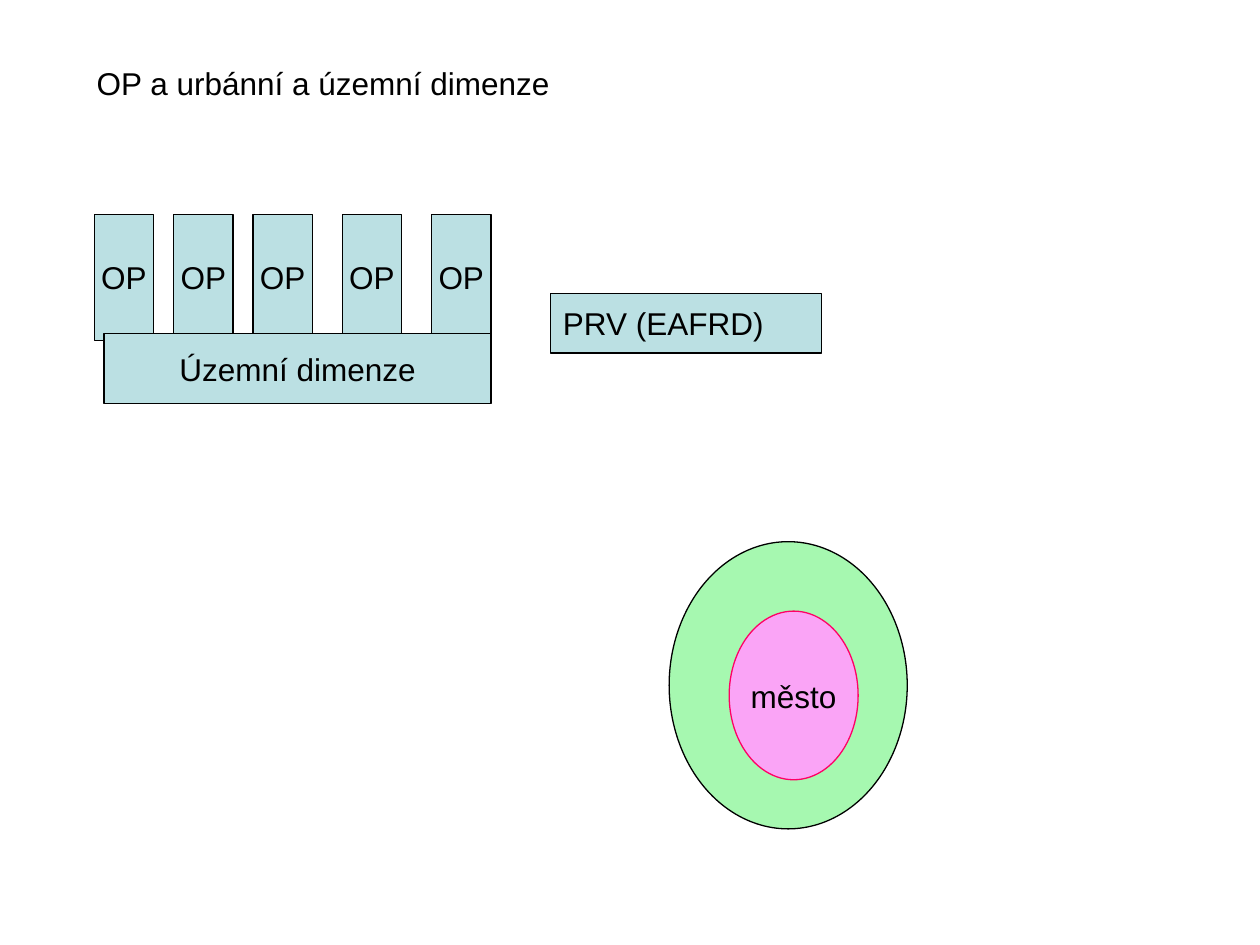
"""Builds a slide on the urban and territorial dimension of the programmes."""
from pptx import Presentation
from pptx.dml.color import RGBColor
from pptx.enum.shapes import MSO_SHAPE
from pptx.enum.text import MSO_ANCHOR, PP_ALIGN
from pptx.util import Cm, Pt

THEME = {
    "text": "000000", "outline": "000000", "box": "BBE0E3",
    "region": "A6F8B0", "city": "FAA4F6", "city_outline": "FF0066",
    "font": "Arial", "size": 18, "line": 0.75,
}
TITLE = ("OP a urbánní a územní dimenze", (1.7, 1.17, 22.4, 1.02))
PROGRAMMES = ["OP"] * 5
PROGRAMME_GAPS = [0.4, 0.4, 0.6, 0.6, 0]
PROGRAMME_BOX = (1.9, 4.32, 1.2, 2.54)
REGION = ("", MSO_SHAPE.OVAL, (13.49, 10.92, 4.8, 5.79), "region", "outline", PP_ALIGN.CENTER)
OTHERS = [
    ("PRV (EAFRD)", MSO_SHAPE.RECTANGLE, (11.1, 5.92, 5.46, 1.2), "box", "outline", PP_ALIGN.LEFT),
    ("Územní dimenze", MSO_SHAPE.RECTANGLE, (2.1, 6.73, 7.8, 1.4), "box", "outline", PP_ALIGN.CENTER),
    ("město", MSO_SHAPE.OVAL, (14.7, 12.32, 2.6, 3.4), "city", "city_outline", PP_ALIGN.CENTER),
]


def color(name):
    return RGBColor.from_string(THEME[name])


def apply(target, values):
    for name, value in values.items():
        setattr(target, name, value)


def write(sp, text, align, frame):
    tf = sp.text_frame
    apply(tf, frame)
    p = tf.paragraphs[0]
    p.alignment = align
    r = p.add_run()
    r.text = text
    apply(r.font, {"name": THEME["font"], "size": Pt(THEME["size"])})
    r.font.color.rgb = color("text")


def add_figure(s, text, kind, box, fill, outline, align):
    sp = s.shapes.add_shape(kind, *map(Cm, box))
    sp.shadow.inherit = False
    sp.fill.solid()
    sp.fill.fore_color.rgb = color(fill)
    sp.line.color.rgb = color(outline)
    sp.line.width = Pt(THEME["line"])
    if text:
        wrap = align == PP_ALIGN.LEFT
        write(sp, text, align, {"word_wrap": wrap, "vertical_anchor": MSO_ANCHOR.MIDDLE})


def main():
    prs = Presentation()
    apply(prs, {"slide_width": Cm(25.4), "slide_height": Cm(19.05)})
    s = prs.slides.add_slide(prs.slide_layouts[6])
    add_figure(s, *REGION)
    left, top, width, height = PROGRAMME_BOX
    for text, gap in zip(PROGRAMMES, PROGRAMME_GAPS):
        box = (left, top, width, height)
        add_figure(s, text, MSO_SHAPE.RECTANGLE, box, "box", "outline", PP_ALIGN.CENTER)
        left += width + gap
    for figure in OTHERS:
        add_figure(s, *figure)
    text, box = TITLE
    write(s.shapes.add_textbox(*map(Cm, box)), text, PP_ALIGN.LEFT, {"word_wrap": True})
    prs.save("out.pptx")


if __name__ == "__main__":
    main()
